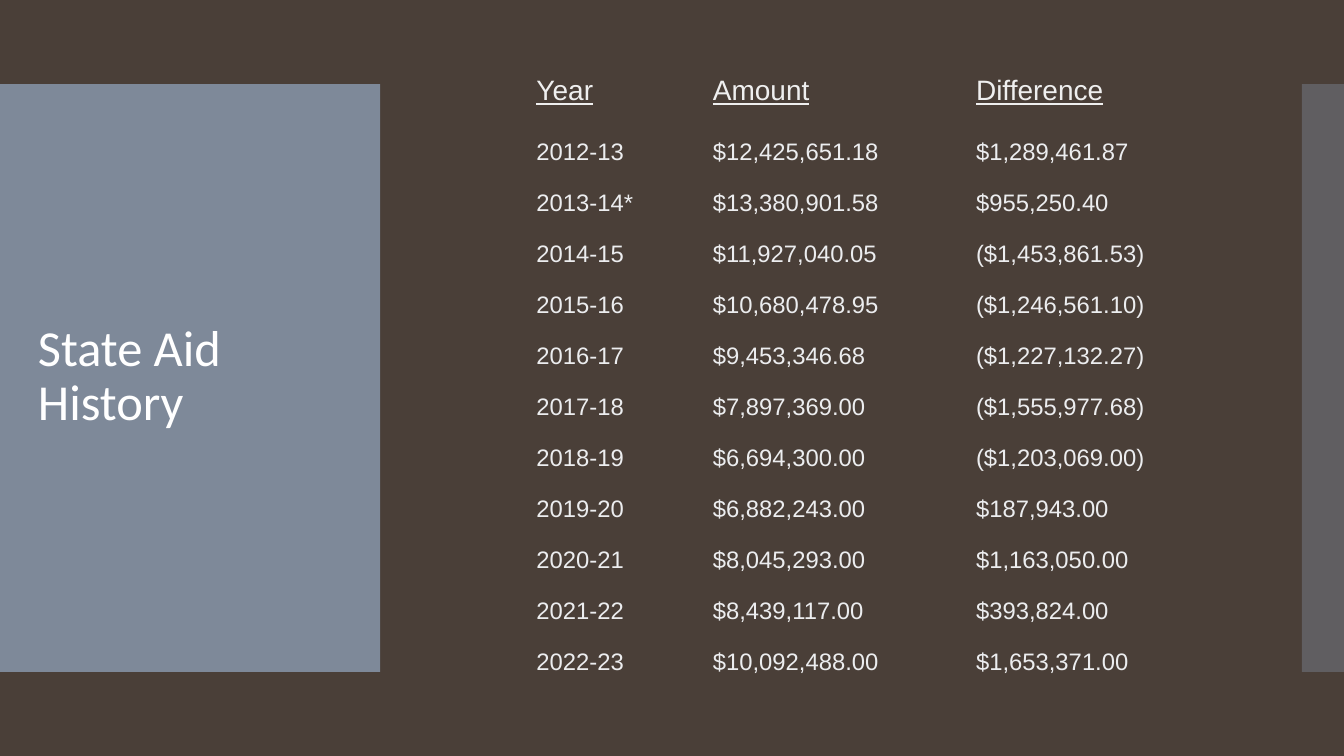
from dataclasses import dataclass

from lxml.etree import SubElement
from pptx import Presentation
from pptx.dml.color import RGBColor
from pptx.enum.shapes import MSO_SHAPE
from pptx.enum.text import MSO_ANCHOR
from pptx.oxml.ns import qn
from pptx.slide import Slide

PX = 6350  # EMU per px, 144 px to the inch
NO_GRID_STYLE = "{2D5ABB26-0587-4C30-8999-92F81FD0307C}"


@dataclass(frozen=True)
class Theme:
    background: RGBColor = RGBColor.from_string("4A3F38")
    panel: RGBColor = RGBColor.from_string("818E9F")
    title: RGBColor = RGBColor.from_string("FFFFFF")
    header: RGBColor = RGBColor.from_string("EFEFEF")
    body: RGBColor = RGBColor.from_string("ECEDEF")
    title_font: str = "Calibri"
    table_font: str = "Arial"
    title_pt: int = 36
    header_pt: int = 20
    body_pt: int = 17


@dataclass(frozen=True)
class Panel:
    left: int
    width: int
    opacity: int


@dataclass(frozen=True)
class Grid:
    top: int
    row_height: int
    rows: list[tuple[str, str, str]]
    size_pt: int
    color: RGBColor
    underline: bool = False


THEME = Theme()
PANEL_TOP, PANEL_HEIGHT = 120, 840
TABLE_LEFT, COLUMN_WIDTHS, CELL_MARGIN = 752, (252, 376, 376), 14

PANELS = [Panel(0, 543, 95), Panel(1860, 60, 40)]

AID_ROWS = [
    ("2012-13", "$12,425,651.18", "$1,289,461.87"),
    ("2013-14*", "$13,380,901.58", "$955,250.40"),
    ("2014-15", "$11,927,040.05", "($1,453,861.53)"),
    ("2015-16", "$10,680,478.95", "($1,246,561.10)"),
    ("2016-17", "$9,453,346.68", "($1,227,132.27)"),
    ("2017-18", "$7,897,369.00", "($1,555,977.68)"),
    ("2018-19", "$6,694,300.00", "($1,203,069.00)"),
    ("2019-20", "$6,882,243.00", "$187,943.00"),
    ("2020-21", "$8,045,293.00", "$1,163,050.00"),
    ("2021-22", "$8,439,117.00", "$393,824.00"),
    ("2022-23", "$10,092,488.00", "$1,653,371.00"),
]

GRIDS = [
    Grid(184, 73, AID_ROWS, THEME.body_pt, THEME.body),
    Grid(94, 71, [("Year", "Amount", "Difference")], THEME.header_pt, THEME.header, True),
]


def px(*lengths: int) -> list[int]:
    return [length * PX for length in lengths]


def style_paragraph(p, font: str, size_pt: int, color: RGBColor) -> None:
    p.font.name = font
    p.font.size = size_pt * 12700
    p.font.color.rgb = color


def draw_panel(s: Slide, panel: Panel) -> None:
    sp = s.shapes.add_shape(
        MSO_SHAPE.RECTANGLE, *px(panel.left, PANEL_TOP, panel.width, PANEL_HEIGHT))
    sp.shadow.inherit = False
    sp.line.fill.background()
    sp.fill.solid()
    sp.fill.fore_color.rgb = THEME.panel
    color = sp.fill._xPr.find(qn("a:solidFill"))[0]
    SubElement(color, qn("a:alpha"), val=str(panel.opacity * 1000))


def draw_title(s: Slide, text: str) -> None:
    tf = s.shapes.add_textbox(*px(40, 177, 464, 724)).text_frame
    tf.word_wrap = True
    tf.vertical_anchor = MSO_ANCHOR.MIDDLE
    p = tf.paragraphs[0]
    p.text = text
    p.line_spacing = 0.9
    style_paragraph(p, THEME.title_font, THEME.title_pt, THEME.title)


def draw_grid(s: Slide, grid: Grid) -> None:
    frame = s.shapes.add_table(
        len(grid.rows), len(COLUMN_WIDTHS),
        *px(TABLE_LEFT, grid.top, sum(COLUMN_WIDTHS), grid.row_height * len(grid.rows)))
    table = frame.table
    table.first_row = table.horz_banding = False
    table._tbl.tblPr.find(qn("a:tableStyleId")).text = NO_GRID_STYLE
    for column, width in zip(table.columns, COLUMN_WIDTHS):
        column.width = width * PX
    for row, values in zip(table.rows, grid.rows):
        row.height = grid.row_height * PX
        for cell, value in zip(row.cells, values):
            cell.fill.background()
            cell.margin_top = cell.margin_bottom = CELL_MARGIN * PX
            p = cell.text_frame.paragraphs[0]
            p.text = value
            style_paragraph(p, THEME.table_font, grid.size_pt, grid.color)
            if grid.underline:
                p.font.underline = True


def main() -> None:
    prs = Presentation()
    prs.slide_width, prs.slide_height = px(1920, 1080)
    s = prs.slides.add_slide(prs.slide_layouts[6])
    s.background.fill.solid()
    s.background.fill.fore_color.rgb = THEME.background
    for panel in PANELS:
        draw_panel(s, panel)
    draw_title(s, "State Aid History")
    for grid in GRIDS:
        draw_grid(s, grid)
    prs.save("out.pptx")


if __name__ == "__main__":
    main()
